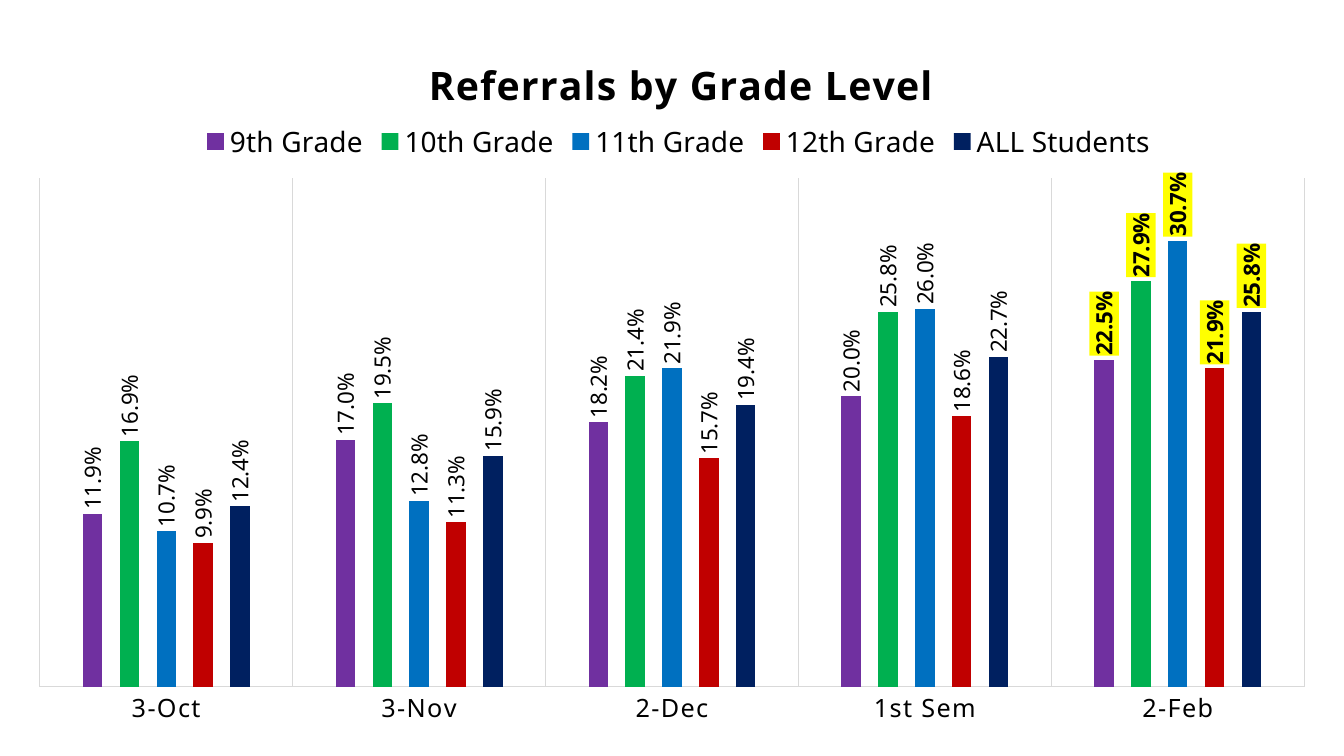
import pptx
import pptx.chart.data
import pptx.dml.color
import pptx.enum.chart
import pptx.oxml
import pptx.oxml.ns
import pptx.util

RGBColor = pptx.dml.color.RGBColor
Pt = pptx.util.Pt

BLACK = RGBColor(0x00, 0x00, 0x00)
GRID_GRAY = RGBColor(0xD9, 0xD9, 0xD9)
HIGHLIGHT = RGBColor(0xFF, 0xFF, 0x00)
PURPLE = RGBColor(0x70, 0x30, 0xA0)
GREEN = RGBColor(0x00, 0xB0, 0x50)
BLUE = RGBColor(0x00, 0x70, 0xC0)
RED = RGBColor(0xC0, 0x00, 0x00)
NAVY = RGBColor(0x00, 0x20, 0x60)

FONT = "Noto Sans"
PERCENT = "0.0%"
PERIODS = ["3-Oct", "3-Nov", "2-Dec", "1st Sem", "2-Feb"]
GRADES = [
    ("9th Grade", PURPLE, [0.119, 0.170, 0.182, 0.200, 0.225]),
    ("10th Grade", GREEN, [0.169, 0.195, 0.214, 0.258, 0.279]),
    ("11th Grade", BLUE, [0.107, 0.128, 0.219, 0.260, 0.307]),
    ("12th Grade", RED, [0.099, 0.113, 0.157, 0.186, 0.219]),
    ("ALL Students", NAVY, [0.124, 0.159, 0.194, 0.227, 0.258]),
]


def style_font(font, size, bold=False):
    font.name = FONT
    font.size = Pt(size)
    font.bold = bold
    font.color.rgb = BLACK


def set_layout(part, index, inner=False, **shares):
    """Place a chart part by shares (x, y, w, h) of the chart's size."""
    for old in part.xpath("c:layout"):
        part.remove(old)
    target = '<c:layoutTarget val="inner"/>' if inner else ""
    modes = "".join(f'<c:{key}Mode val="edge"/>' for key in shares if key in "xy")
    values = "".join(f'<c:{key} val="{share}"/>' for key, share in shares.items())
    part.insert(index, pptx.oxml.parse_xml(
        f'<c:layout {pptx.oxml.ns.nsdecls("c")}><c:manualLayout>'
        f"{target}{modes}{values}</c:manualLayout></c:layout>"))


def style_axes(chart):
    periods = chart.category_axis
    periods.major_tick_mark = pptx.enum.chart.XL_TICK_MARK.NONE
    periods.has_major_gridlines = True
    for line in (periods.format.line, periods.major_gridlines.format.line):
        line.color.rgb = GRID_GRAY
        line.width = Pt(0.75)
    style_font(periods.tick_labels.font, 18)

    rates = chart.value_axis
    rates.minimum_scale = 0
    rates.maximum_scale = 0.35
    rates.has_major_gridlines = False
    rates.visible = False


def highlight_latest(series):
    label = series.points[len(PERIODS) - 1].data_label
    style_font(label.font, 16, bold=True)
    label.position = pptx.enum.chart.XL_LABEL_POSITION.OUTSIDE_END
    text_props = series.format.element.xpath("c:dLbls/c:dLbl/c:txPr")[0] \
        if hasattr(series.format, "element") else \
        series.points[0]._element.xpath("c:dLbls/c:dLbl/c:txPr")[0]
    text_props.addprevious(pptx.oxml.parse_xml(
        f'<c:spPr {pptx.oxml.ns.nsdecls("c", "a")}><a:solidFill>'
        f'<a:srgbClr val="{HIGHLIGHT}"/></a:solidFill></c:spPr>'))


def style_series(series, color):
    series.format.fill.solid()
    series.format.fill.fore_color.rgb = color
    labels = series.data_labels
    labels.show_value = True
    labels.number_format = PERCENT
    labels.number_format_is_linked = False
    labels.position = pptx.enum.chart.XL_LABEL_POSITION.OUTSIDE_END
    style_font(labels.font, 16)
    highlight_latest(series)


def add_referrals_chart(slide, left, top, width, height):
    referrals = pptx.chart.data.CategoryChartData(number_format=PERCENT)
    referrals.categories = PERIODS
    for grade, _, rates in GRADES:
        referrals.add_series(grade, rates)
    chart = slide.shapes.add_chart(
        pptx.enum.chart.XL_CHART_TYPE.COLUMN_CLUSTERED,
        left, top, width, height, referrals).chart
    style_font(chart.font, 10)

    chart.has_title = True
    heading = chart.chart_title.text_frame
    heading.text = "Referrals by Grade Level"
    style_font(heading.paragraphs[0].runs[0].font, 28, bold=True)

    chart.has_legend = True
    chart.legend.position = pptx.enum.chart.XL_LEGEND_POSITION.TOP
    chart.legend.include_in_layout = False
    style_font(chart.legend.font, 20)

    style_axes(chart)
    columns = chart.plots[0]
    columns.vary_by_categories = False
    columns.gap_width = 444
    columns.overlap = -90
    for series, (_, color, _) in zip(columns.series, GRADES):
        style_series(series, color)

    root = chart.element
    for body in root.xpath(".//c:dLbls//a:bodyPr"):
        body.set("rot", "-5400000")
        body.set("vert", "horz")
    for run in root.xpath(".//c:title//a:rPr | .//c:catAx//a:defRPr"):
        run.set("spc", "100")
    set_layout(root.xpath(".//c:title")[0], 1, x=0.31, y=0.05)
    set_layout(root.xpath(".//c:legend")[0], 1, x=0.14, y=0.15, w=0.73, h=0.06)
    set_layout(root.xpath(".//c:plotArea")[0], 0, inner=True,
               x=0.02, y=0.23, w=0.96, h=0.695)


def main():
    deck = pptx.Presentation()
    deck.slide_width = pptx.util.Inches(13.33)
    deck.slide_height = pptx.util.Inches(7.5)
    slide = deck.slides.add_slide(deck.slide_layouts[6])
    width, height = deck.slide_width, deck.slide_height
    add_referrals_chart(slide, int(width * 0.01), int(height * 0.013),
                        int(width * 0.98), int(height * 0.968))
    deck.save("out.pptx")


if __name__ == "__main__":
    main()
